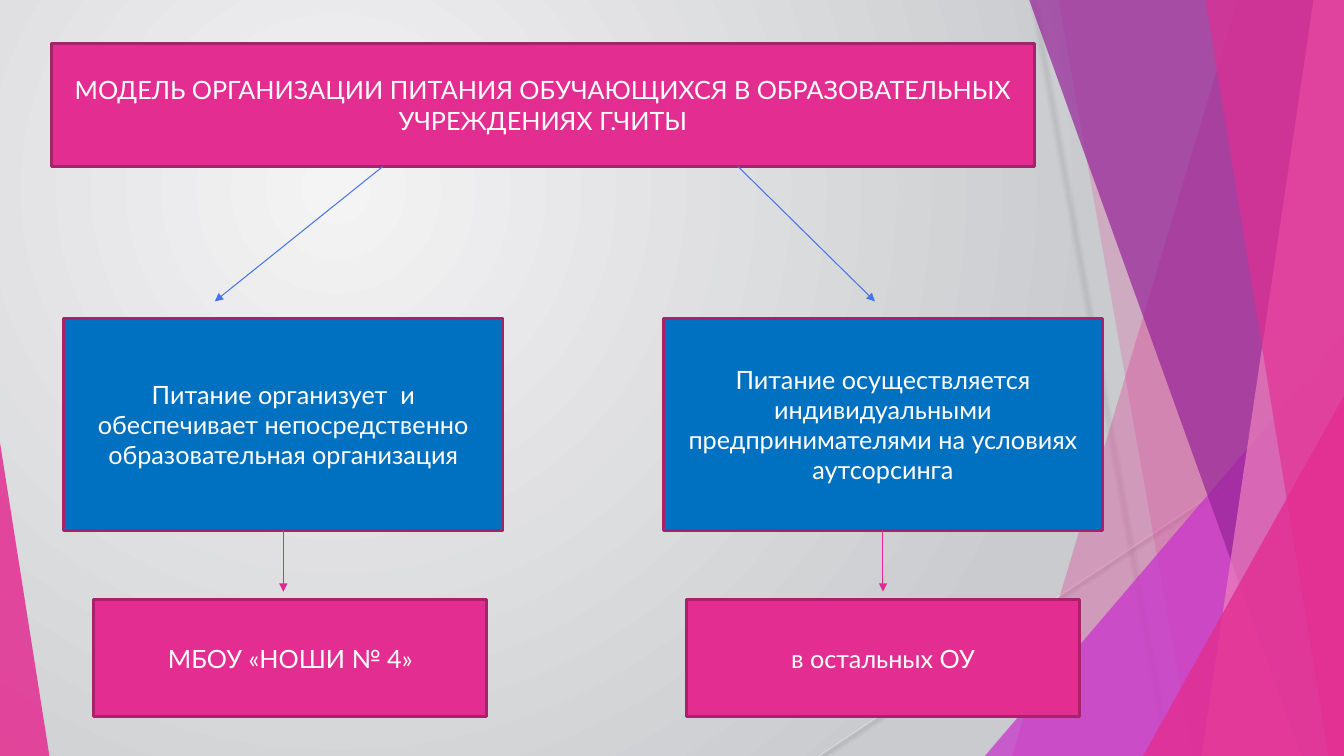
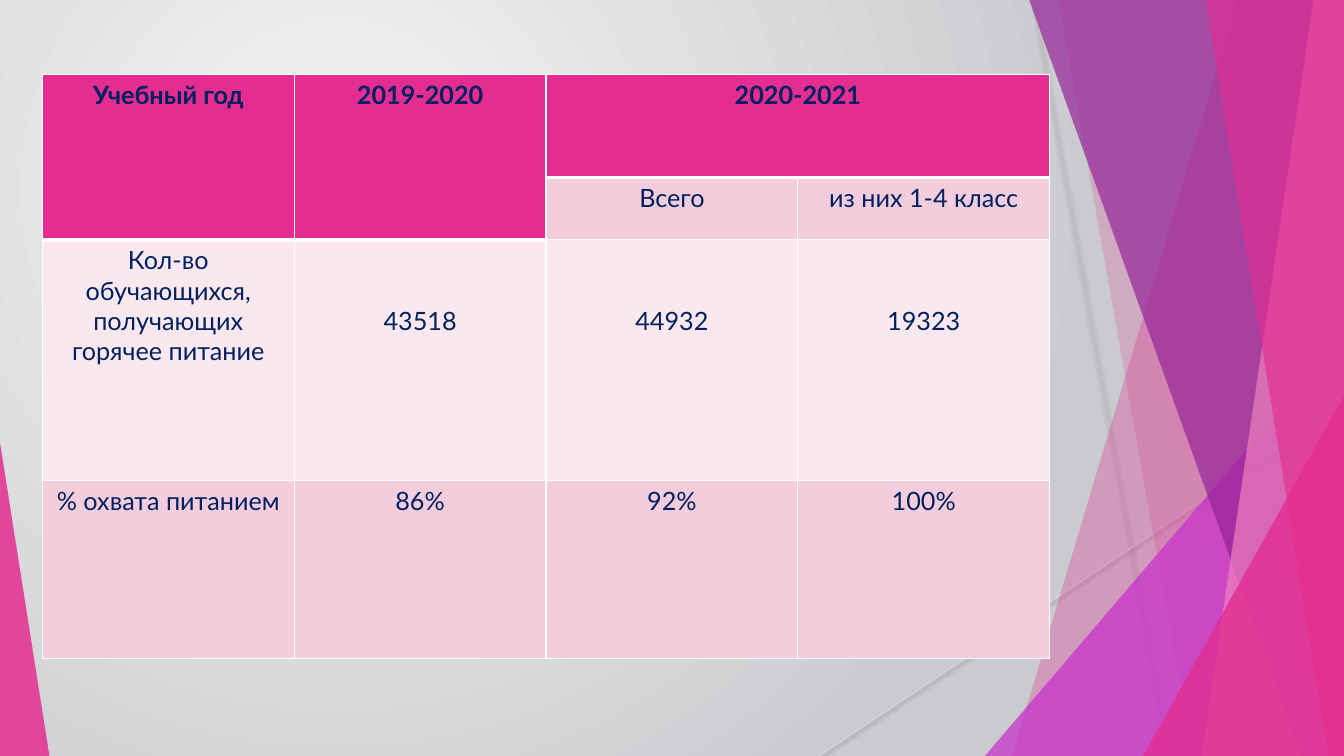
from dataclasses import dataclass

from lxml.etree import SubElement
from pptx import Presentation
from pptx.dml.color import RGBColor
from pptx.enum.shapes import MSO_CONNECTOR, MSO_SHAPE
from pptx.enum.text import MSO_ANCHOR, MSO_AUTO_SIZE, PP_ALIGN
from pptx.oxml.ns import qn
from pptx.util import Emu, Inches, Pt

SLIDE_WIDTH, SLIDE_HEIGHT = Inches(13.33), Inches(7.5)


@dataclass(frozen=True)
class Theme:
    font: str = "Lato"
    text_size: int = 18
    pink: str = "E32D91"
    pale_pink: str = "EE81BD"
    violet: str = "C830CC"
    purple: str = "962499"
    blue: str = "0070C0"
    outline: str = "A8216B"
    branch_arrow: str = "4775E7"
    example_arrow: str = "E2288E"
    white: str = "FFFFFF"
    navy: str = "002060"
    row_dark: str = "F4CDDC"
    row_light: str = "FAE8EE"
    glow_center: str = "F4F4F5"
    glow_edge: str = "C9CBCE"
    crease_dark: str = "BFBFBF"
    crease_light: str = "D9D9D9"
    hairline: float = 0.75
    box_line: float = 2
    cell_line: float = 1
    header_line: float = 3


THEME = Theme()


# All places and sizes below are percentages of the slide's width and height.
@dataclass(frozen=True)
class Band:
    """Area from a slanted left edge to the right side of the slide."""
    top_x: float
    bottom_x: float
    color: str
    opacity: int


@dataclass(frozen=True)
class Wedge:
    """Right triangle standing on the bottom of the slide."""
    left: float
    top: float
    width: float
    apex: int
    color: str
    opacity: int


@dataclass(frozen=True)
class Frame:
    left: float
    top: float
    width: float
    height: float

    @property
    def bottom(self) -> float:
        return self.top + self.height

    @property
    def center(self) -> float:
        return self.left + self.width / 2


@dataclass(frozen=True)
class Branch:
    arrow_start: float
    arrow_end: float
    choice_left: float
    choice: str
    example_left: float
    example: str


CREASES = [
    (76.88, 0, 86.85, 100, THEME.crease_dark),
    (100, 53.73, 60.9, 100, THEME.crease_light),
]
FACETS = [
    Band(92.1, 75.3, THEME.pink, 30),
    Band(78.75, 88.73, THEME.pink, 20),
    Wedge(73.28, 44.4, 26.72, 1, THEME.violet, 72),
    Band(76.58, 96.83, THEME.purple, 70),
    Band(97.73, 89.4, THEME.pale_pink, 70),
    Band(89.7, 98.85, THEME.pink, 65),
    Wedge(85.05, 52.4, 14.95, 1, THEME.pink, 80),
    Wedge(0, 58.53, 3.68, 0, THEME.pink, 85),
]
TITLE = "МОДЕЛЬ ОРГАНИЗАЦИИ ПИТАНИЯ ОБУЧАЮЩИХСЯ В ОБРАЗОВАТЕЛЬНЫХ УЧРЕЖДЕНИЯХ Г.ЧИТЫ"
TITLE_FRAME = Frame(3.83, 5.73, 73.13, 16.27)
BRANCHES = [
    Branch(28.5, 15.98, 4.73,
           "Питание организует  и обеспечивает непосредственно образовательная организация",
           6.98, "МБОУ «НОШИ № 4»"),
    Branch(54.9, 65.1, 49.35,
           "Питание осуществляется индивидуальными предпринимателями на условиях аутсорсинга",
           51.08, "в остальных ОУ"),
]
TABLE_FRAME = Frame(3.15, 9.87, 74.95, 77.21)
ROW_HEIGHTS = [13.6, 8.27, 31.87, 23.47]
ROW_FILLS = [THEME.pink, THEME.row_dark, THEME.row_light, THEME.row_dark]
CELLS = [
    ["Учебный год", "2019-2020", "2020-2021", ""],
    ["", "", "Всего", "из них 1-4 класс"],
    ["Кол-во обучающихся, получающих горячее питание", "43518", "44932", "19323"],
    ["% охвата питанием", "86%", "92%", "100%"],
]
MERGES = [((0, 0), (1, 0)), ((0, 1), (1, 1)), ((0, 2), (0, 3))]
COUNT_ROW = 2


def across(percent: float) -> Emu:
    return Emu(round(SLIDE_WIDTH * percent / 100))


def down(percent: float) -> Emu:
    return Emu(round(SLIDE_HEIGHT * percent / 100))


def rgb(color: str) -> RGBColor:
    return RGBColor.from_string(color)


def write(text_frame, text: str, color: str, bold: bool = False) -> None:
    para = text_frame.paragraphs[0]
    para.alignment = PP_ALIGN.CENTER
    span = para.add_run()
    span.text = text
    span.font.name = THEME.font
    span.font.size = Pt(THEME.text_size)
    span.font.bold = bold
    span.font.color.rgb = rgb(color)


def format_box(box, fill: str, text: str) -> None:
    box.shadow.inherit = False
    box.fill.solid()
    box.fill.fore_color.rgb = rgb(fill)
    box.line.color.rgb = rgb(THEME.outline)
    box.line.width = Pt(THEME.box_line)
    frame = box.text_frame
    frame.word_wrap = True
    frame.auto_size = MSO_AUTO_SIZE.NONE
    frame.vertical_anchor = MSO_ANCHOR.MIDDLE
    write(frame, text, THEME.white)


def add_box(page, place: Frame, fill: str, text: str):
    box = page.shapes.add_shape(MSO_SHAPE.RECTANGLE, across(place.left), down(place.top),
                                across(place.width), down(place.height))
    format_box(box, fill, text)
    return box


def add_line(shapes, x1: float, y1: float, x2: float, y2: float, color: str):
    """Draw a hairline and return it with its empty effect list."""
    line = shapes.add_connector(MSO_CONNECTOR.STRAIGHT, across(x1), down(y1), across(x2), down(y2))
    line.line.color.rgb = rgb(color)
    line.line.width = Pt(THEME.hairline)
    return line, SubElement(line.element.spPr, qn("a:effectLst"))


def add_arrow(page, x1: float, y1: float, x2: float, y2: float, color: str):
    arrow, _ = add_line(page.shapes, x1, y1, x2, y2, color)
    SubElement(arrow.element.spPr.find(qn("a:ln")), qn("a:tailEnd"), type="triangle")
    return arrow


def add_crease(shapes, x1: float, y1: float, x2: float, y2: float, color: str) -> None:
    _, effects = add_line(shapes, x1, y1, x2, y2, color)
    shadow = SubElement(effects, qn("a:outerShdw"), blurRad=str(Pt(3.1)), dist=str(Pt(1.6)),
                        dir="5400000", rotWithShape="0")
    shade = SubElement(shadow, qn("a:srgbClr"), val="000000")
    SubElement(shade, qn("a:alpha"), val="38000")


def add_facet(shapes, facet: Band | Wedge) -> None:
    if isinstance(facet, Band):
        builder = shapes.build_freeform(across(facet.top_x), 0)
        builder.add_line_segments([(across(100), 0), (across(100), down(100)),
                                   (across(facet.bottom_x), down(100))])
        shape = builder.convert_to_shape()
    else:
        shape = shapes.add_shape(MSO_SHAPE.ISOSCELES_TRIANGLE, across(facet.left), down(facet.top),
                                 across(facet.width), down(100 - facet.top))
        shape.adjustments[0] = facet.apex
    shape.shadow.inherit = False
    shape.line.fill.background()
    shape.fill.solid()
    shape.fill.fore_color.rgb = rgb(facet.color)
    color = shape.element.spPr.find(qn("a:solidFill")).find(qn("a:srgbClr"))
    SubElement(color, qn("a:alpha"), val=str(facet.opacity * 1000))


def decorate_master(master, page) -> None:
    """Build the facets on a page, then move them to the master for every slide."""
    fill = master.background.fill
    fill.gradient()
    for stop, color, position in zip(fill.gradient_stops, (THEME.glow_center, THEME.glow_edge), (0, 1)):
        stop.color.rgb = rgb(color)
        stop.position = position
    gradient = master.element.find(".//" + qn("a:gradFill"))
    for linear in gradient.findall(qn("a:lin")):
        gradient.remove(linear)
    radial = SubElement(gradient, qn("a:path"), path="circle")
    SubElement(radial, qn("a:fillToRect"), l="50000", t="50000", r="100000", b="100000")

    group = page.shapes.add_group_shape()
    for crease in CREASES:
        add_crease(group.shapes, *crease)
    for facet in FACETS:
        add_facet(group.shapes, facet)
    for number, properties in enumerate(group.element.iter(qn("p:cNvPr")), start=100):
        properties.set("id", str(number))
    master.shapes.element.insert(2, group.element)


def build_model(page) -> None:
    title = page.shapes.title
    title.left, title.top = across(TITLE_FRAME.left), down(TITLE_FRAME.top)
    title.width, title.height = across(TITLE_FRAME.width), down(TITLE_FRAME.height)
    format_box(title, THEME.pink, TITLE)
    for branch in BRANCHES:
        choice = Frame(branch.choice_left, 42.13, 32.7, 28)
        example = Frame(branch.example_left, 79.33, 29.25, 15.47)
        add_arrow(page, branch.arrow_start, TITLE_FRAME.bottom, branch.arrow_end, 39.87,
                  THEME.branch_arrow)
        choice_box = add_box(page, choice, THEME.blue, branch.choice)
        arrow = add_arrow(page, choice.center, choice.bottom, choice.center, 78.27,
                          THEME.example_arrow)
        arrow.begin_connect(choice_box, 2)
        add_box(page, example, THEME.pink, branch.example)


def is_header(row: int, column: int) -> bool:
    return row == 0 or (row == 1 and column < 2)


def set_borders(cell, top: float, bottom: float) -> None:
    properties = cell._tc.get_or_add_tcPr()
    widths = {"lnL": THEME.cell_line, "lnR": THEME.cell_line, "lnT": top, "lnB": bottom}
    for side, width in widths.items():
        border = SubElement(properties, qn(f"a:{side}"), w=str(Pt(width)))
        SubElement(SubElement(border, qn("a:solidFill")), qn("a:srgbClr"), val=THEME.white)


def build_coverage(page) -> None:
    table = page.shapes.add_table(
        len(CELLS), len(CELLS[0]), across(TABLE_FRAME.left), down(TABLE_FRAME.top),
        across(TABLE_FRAME.width), down(TABLE_FRAME.height)).table
    table.first_row = table.horz_banding = False
    for row, height in zip(table.rows, ROW_HEIGHTS):
        row.height = down(height)
    for first, last in MERGES:
        table.cell(*first).merge(table.cell(*last))
    for row, texts in enumerate(CELLS):
        for column, text in enumerate(texts):
            cell = table.cell(row, column)
            header = is_header(row, column)
            below_header = row > 0 and is_header(row - 1, column)
            set_borders(cell, THEME.header_line if below_header else THEME.cell_line,
                        THEME.header_line if header else THEME.cell_line)
            cell.fill.solid()
            cell.fill.fore_color.rgb = rgb(THEME.pink if header else ROW_FILLS[row])
            if row == COUNT_ROW and column > 0:
                cell.margin_top = Inches(0.65)
            if text:
                write(cell.text_frame, text, THEME.navy, bold=header)


def main() -> None:
    deck = Presentation()
    deck.slide_width, deck.slide_height = SLIDE_WIDTH, SLIDE_HEIGHT
    title_only, blank = deck.slide_layouts[5], deck.slide_layouts[6]
    model_page = deck.slides.add_slide(title_only)
    decorate_master(deck.slide_master, model_page)
    build_model(model_page)
    build_coverage(deck.slides.add_slide(blank))
    deck.save("out.pptx")


if __name__ == "__main__":
    main()
